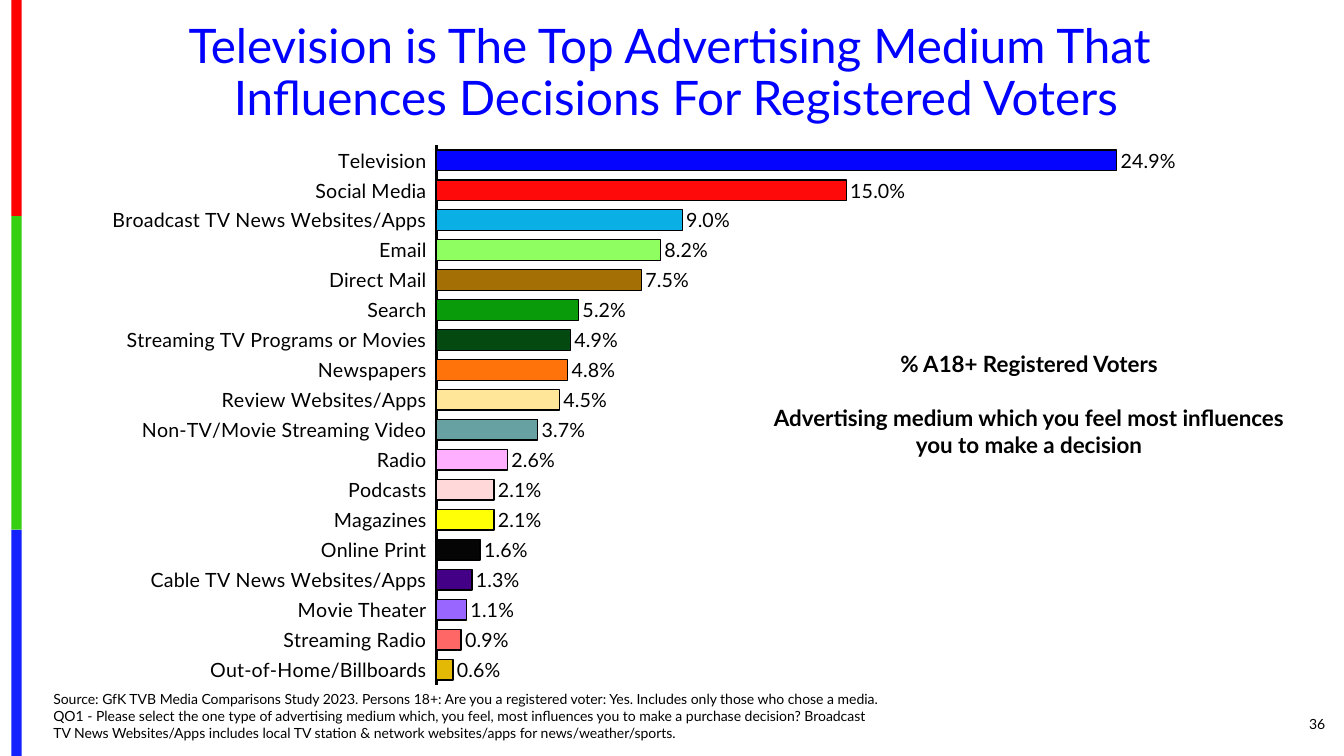
from lxml import etree
from pptx import Presentation
from pptx.chart.data import CategoryChartData
from pptx.dml.color import RGBColor
from pptx.enum.chart import XL_CHART_TYPE, XL_LABEL_POSITION, XL_TICK_LABEL_POSITION, XL_TICK_MARK
from pptx.enum.shapes import MSO_SHAPE
from pptx.enum.text import MSO_ANCHOR, MSO_AUTO_SIZE, PP_ALIGN
from pptx.oxml.ns import qn
from pptx.util import Cm, Pt

BAR_CLUSTERED = XL_CHART_TYPE.BAR_CLUSTERED
OUTSIDE_END = XL_LABEL_POSITION.OUTSIDE_END
LABELS_LOW = XL_TICK_LABEL_POSITION.LOW
NO_TICKS = XL_TICK_MARK.NONE
RECTANGLE = MSO_SHAPE.RECTANGLE
TOP, MIDDLE, BOTTOM = MSO_ANCHOR.TOP, MSO_ANCHOR.MIDDLE, MSO_ANCHOR.BOTTOM
LEFT, CENTER, RIGHT = PP_ALIGN.LEFT, PP_ALIGN.CENTER, PP_ALIGN.RIGHT
NO_AUTOFIT = MSO_AUTO_SIZE.NONE

FONT_NAME = "Lato"
BLACK = RGBColor(0x00, 0x00, 0x00)
TITLE_BLUE = RGBColor(0x00, 0x00, 0xFF)
STRIPE_RED = RGBColor(0xFE, 0x00, 0x00)
STRIPE_GREEN = RGBColor(0x36, 0xCF, 0x12)
STRIPE_BLUE = RGBColor(0x13, 0x22, 0xFE)

MEDIA = [
    ("Television", 0.249, RGBColor(0x05, 0x05, 0xFF)),
    ("Social Media", 0.15, RGBColor(0xFF, 0x0A, 0x0A)),
    ("Broadcast TV News Websites/Apps", 0.09, RGBColor(0x0A, 0xAF, 0xE6)),
    ("Email", 0.082, RGBColor(0x8E, 0xFE, 0x60)),
    ("Direct Mail", 0.075, RGBColor(0xA4, 0x6F, 0x05)),
    ("Search", 0.052, RGBColor(0x0A, 0x9B, 0x0A)),
    ("Streaming TV Programs or Movies", 0.049, RGBColor(0x03, 0x49, 0x10)),
    ("Newspapers", 0.048, RGBColor(0xFF, 0x73, 0x0A)),
    ("Review Websites/Apps", 0.045, RGBColor(0xFF, 0xE6, 0x99)),
    ("Non-TV/Movie Streaming Video", 0.037, RGBColor(0x67, 0xA1, 0xA1)),
    ("Radio", 0.026, RGBColor(0xFF, 0xAF, 0xFF)),
    ("Podcasts", 0.021, RGBColor(0xFF, 0xD9, 0xD9)),
    ("Magazines", 0.021, RGBColor(0xFF, 0xFF, 0x05)),
    ("Online Print", 0.016, RGBColor(0x05, 0x05, 0x05)),
    ("Cable TV News Websites/Apps", 0.013, RGBColor(0x43, 0x00, 0x86)),
    ("Movie Theater", 0.011, RGBColor(0x99, 0x66, 0xFF)),
    ("Streaming Radio", 0.009, RGBColor(0xFF, 0x66, 0x66)),
    ("Out-of-Home/Billboards", 0.006, RGBColor(0xE3, 0xB9, 0x05)),
]


def format_font(font, size, color=BLACK, bold=False):
    font.name = FONT_NAME
    font.size = Pt(size)
    font.color.rgb = color
    font.bold = bold


def write_text(shape, texts, box, size, color=BLACK, bold=False, align=LEFT, anchor=TOP, spacing=1.0, gap=0):
    shape.left, shape.top, shape.width, shape.height = [Cm(length) for length in box]
    frame = shape.text_frame
    frame.text = "\n".join(texts)
    frame.word_wrap = True
    frame.auto_size = NO_AUTOFIT
    frame.vertical_anchor = anchor
    for index, paragraph in enumerate(frame.paragraphs):
        paragraph.alignment = align
        paragraph.line_spacing = spacing
        paragraph.space_before = Pt(gap if index else 0)
        for run in paragraph.runs:
            format_font(run.font, size, color, bold)


presentation = Presentation()
presentation.slide_width = Cm(33.87)
presentation.slide_height = Cm(19.05)
slide = presentation.slides.add_slide(presentation.slide_layouts[1])
title, source_note = slide.placeholders

stripe_top = 0
for stripe_height, stripe_color in [(5.45, STRIPE_RED), (7.9, STRIPE_GREEN), (5.7, STRIPE_BLUE)]:
    stripe = slide.shapes.add_shape(RECTANGLE, Cm(0.29), Cm(stripe_top), Cm(0.26), Cm(stripe_height))
    stripe.shadow.inherit = False
    stripe.fill.solid()
    stripe.fill.fore_color.rgb = stripe_color
    stripe.line.fill.background()
    stripe_top += stripe_height

chart_data = CategoryChartData(number_format="0.0%")
chart_data.categories = [name for name, share, color in MEDIA]
chart_data.add_series("Series 1", [share for name, share, color in MEDIA])
chart = slide.shapes.add_chart(BAR_CLUSTERED, Cm(1.17), Cm(3.28), Cm(31.01), Cm(14.07), chart_data).chart
chart.has_title = False
chart.has_legend = False
format_font(chart.font, 10)

category_axis = chart.category_axis
category_axis.reverse_order = True
category_axis.major_tick_mark = NO_TICKS
category_axis.tick_label_position = LABELS_LOW
category_axis.format.line.color.rgb = BLACK
category_axis.format.line.width = Pt(1.5)
format_font(category_axis.tick_labels.font, 14)

value_axis = chart.value_axis
value_axis.minimum_scale = 0
value_axis.maximum_scale = 0.3
value_axis.has_major_gridlines = False
value_axis.visible = False

plot = chart.plots[0]
plot.gap_width = 45
plot.vary_by_categories = False
plot.has_data_labels = True
data_labels = plot.data_labels
data_labels.show_value = True
data_labels.number_format = "0.0%"
data_labels.number_format_is_linked = False
data_labels.position = OUTSIDE_END
format_font(data_labels.font, 14)

for index, (name, share, color) in enumerate(MEDIA):
    bar = plot.series[0].points[index].format
    bar.fill.solid()
    bar.fill.fore_color.rgb = color
    bar.line.color.rgb = BLACK
    bar.line.width = Pt(1)

plot_area = chart.element.find(".//" + qn("c:plotArea"))
for old_layout in plot_area.findall(qn("c:layout")):
    plot_area.remove(old_layout)
layout = etree.Element(qn("c:layout"))
manual_layout = etree.SubElement(layout, qn("c:manualLayout"))
for tag, value in [
    ("layoutTarget", "inner"), ("xMode", "edge"), ("yMode", "edge"),
    ("x", "0.317"), ("y", "0.027"), ("w", "0.666"), ("h", "0.966"),
]:
    etree.SubElement(manual_layout, qn("c:" + tag)).set("val", value)
plot_area.insert(0, layout)

write_text(
    title,
    ["Television is The Top Advertising Medium That \vInfluences Decisions For Registered Voters"],
    (0.84, 0.43, 32.39, 2.87), 34, color=TITLE_BLUE, align=CENTER, anchor=MIDDLE, spacing=0.9,
)

write_text(
    source_note,
    ["Source: GfK TVB Media Comparisons Study 2023. Persons 18+: Are you a registered voter: Yes. "
     "Includes only those who chose a media. QO1 - Please select the one type of advertising medium which, "
     "you feel, most influences you to make a purchase decision? Broadcast TV News Websites/Apps includes "
     "local TV station & network websites/apps for news/weather/sports."],
    (1.09, 17.25, 21.36, 1.55), 10, anchor=BOTTOM,
)
note_properties = source_note.text_frame.paragraphs[0]._p.get_or_add_pPr()
note_properties.set("marL", "0")
note_properties.set("indent", "0")
etree.SubElement(note_properties, qn("a:buNone"))

page_number = slide.shapes.add_textbox(0, 0, 0, 0)
write_text(page_number, ["36"], (30.91, 17.73, 2.74, 1.02), 10, align=RIGHT, anchor=MIDDLE)

question = slide.shapes.add_textbox(0, 0, 0, 0)
write_text(
    question,
    ["% A18+ Registered Voters",
     "Advertising medium which you feel most influences you to make a decision"],
    (19.05, 8.69, 13.77, 3.68), 16, bold=True, align=CENTER, gap=19.5,
)

presentation.save("out.pptx")
